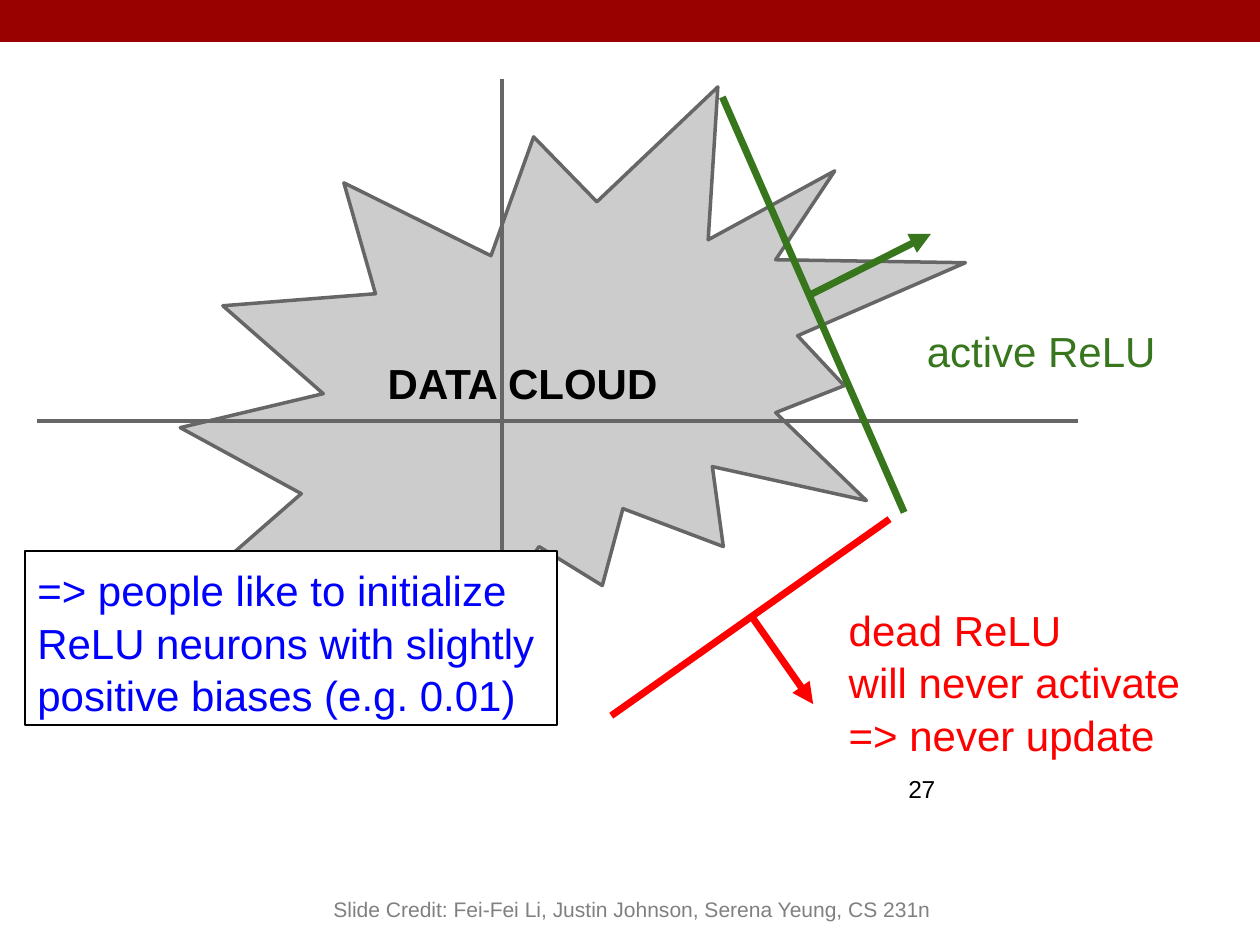
import lxml.etree
import pptx
import pptx.util
import pptx.dml.color
import pptx.enum.shapes
import pptx.enum.text
import pptx.oxml.ns

Pt = pptx.util.Pt
RGBColor = pptx.dml.color.RGBColor
SHAPE = pptx.enum.shapes.MSO_SHAPE
ANCHOR = pptx.enum.text.MSO_ANCHOR
ALIGN = pptx.enum.text.PP_ALIGN
qn = pptx.oxml.ns.qn

BLACK = RGBColor(0x00, 0x00, 0x00)
WHITE = RGBColor(0xFF, 0xFF, 0xFF)
BAND_RED = RGBColor(0x99, 0x00, 0x00)
CLOUD_GRAY = RGBColor(0xCC, 0xCC, 0xCC)
AXIS_GRAY = RGBColor(0x66, 0x66, 0x66)
CREDIT_GRAY = RGBColor(0x80, 0x80, 0x80)
ACTIVE_GREEN = RGBColor(0x38, 0x76, 0x1D)
DEAD_RED = RGBColor(0xFF, 0x00, 0x00)
TIP_BLUE = RGBColor(0x00, 0x00, 0xFF)


def write(shape, text, color, size=18, bold=False, anchor=ANCHOR.TOP,
          align=ALIGN.LEFT, spacing=1.0):
    frame = shape.text_frame
    frame.word_wrap = True
    frame.vertical_anchor = anchor
    frame.margin_left = frame.margin_right = Pt(5.25)
    frame.margin_top = frame.margin_bottom = Pt(5.25)
    frame.text = text
    for paragraph in frame.paragraphs:
        paragraph.alignment = align
        paragraph.line_spacing = spacing
        paragraph.font.name = "Arial"
        paragraph.font.size = Pt(size)
        paragraph.font.bold = bold
        paragraph.font.color.rgb = color


def add_filled(preset, box, fill, outline=None, width=0):
    """Add a preset shape without shadow; no outline colour means no line."""
    shape = slide.shapes.add_shape(preset, *map(Pt, box))
    shape.shadow.inherit = False
    shape.fill.solid()
    shape.fill.fore_color.rgb = fill
    if outline is None:
        shape.line.fill.background()
    else:
        shape.line.color.rgb = outline
        shape.line.width = Pt(width)
    return shape


presentation = pptx.Presentation()
presentation.slide_width, presentation.slide_height = Pt(540), Pt(405)
slide = presentation.slides.add_slide(presentation.slide_layouts[6])

add_filled(SHAPE.RECTANGLE, (0, 0, 540, 18), BAND_RED)

page_number = slide.shapes.add_textbox(Pt(384), Pt(326.5), Pt(32.5), Pt(23))
write(page_number, "27", BLACK, size=10.5, anchor=ANCHOR.MIDDLE)

data_cloud = add_filled(SHAPE.EXPLOSION2, (77.25, 37.25, 336.5, 245),
                        CLOUD_GRAY, AXIS_GRAY, 1.5)
write(data_cloud, "DATA CLOUD", BLACK, bold=True, anchor=ANCHOR.MIDDLE)

# Axes, then each ReLU boundary followed by its arrow: start, end, look
strokes = [
    ((215.25, 34), (215.25, 307), AXIS_GRAY, 1.5, False),
    ((16, 180.5), (462, 180.5), AXIS_GRAY, 1.5, False),
    ((309.6, 41.6), (387.5, 219.6), ACTIVE_GREEN, 3, False),
    ((346.5, 126.75), (399, 100.25), ACTIVE_GREEN, 3, True),
    ((381.25, 222.5), (262, 306.75), DEAD_RED, 3, False),
    ((322.5, 264.75), (348.5, 301.75), DEAD_RED, 3, True),
]
for start, end, color, width, has_arrow in strokes:
    stroke = slide.shapes.add_connector(
        pptx.enum.shapes.MSO_CONNECTOR.STRAIGHT, *map(Pt, start + end))
    stroke.line.color.rgb = color
    stroke.line.width = Pt(width)
    properties = stroke._element.spPr
    lxml.etree.SubElement(properties, qn("a:effectLst"))
    if has_arrow:
        outline = properties.find(qn("a:ln"))
        lxml.etree.SubElement(outline, qn("a:tailEnd"), type="triangle")

active_label = slide.shapes.add_textbox(Pt(392), Pt(133.5), Pt(132.5), Pt(40))
write(active_label, "active ReLU", ACTIVE_GREEN, spacing=1.04)

dead_label = slide.shapes.add_textbox(Pt(358.5), Pt(253), Pt(175.5), Pt(40))
write(dead_label, "dead ReLU\nwill never activate\n=> never update", DEAD_RED,
      spacing=1.04)

bias_tip = add_filled(SHAPE.RECTANGLE, (10.75, 236, 228, 74.75),
                      WHITE, BLACK, 0.75)
write(bias_tip, "=> people like to initialize ReLU neurons with slightly "
      "positive biases (e.g. 0.01)", TIP_BLUE, spacing=1.04)

credit = slide.shapes.add_textbox(Pt(57.5), Pt(364.5), Pt(426.5), Pt(36))
write(credit, "Slide Credit: Fei-Fei Li, Justin Johnson, Serena Yeung, CS 231n",
      CREDIT_GRAY, size=9, anchor=ANCHOR.BOTTOM, align=ALIGN.CENTER)

presentation.save("out.pptx")
